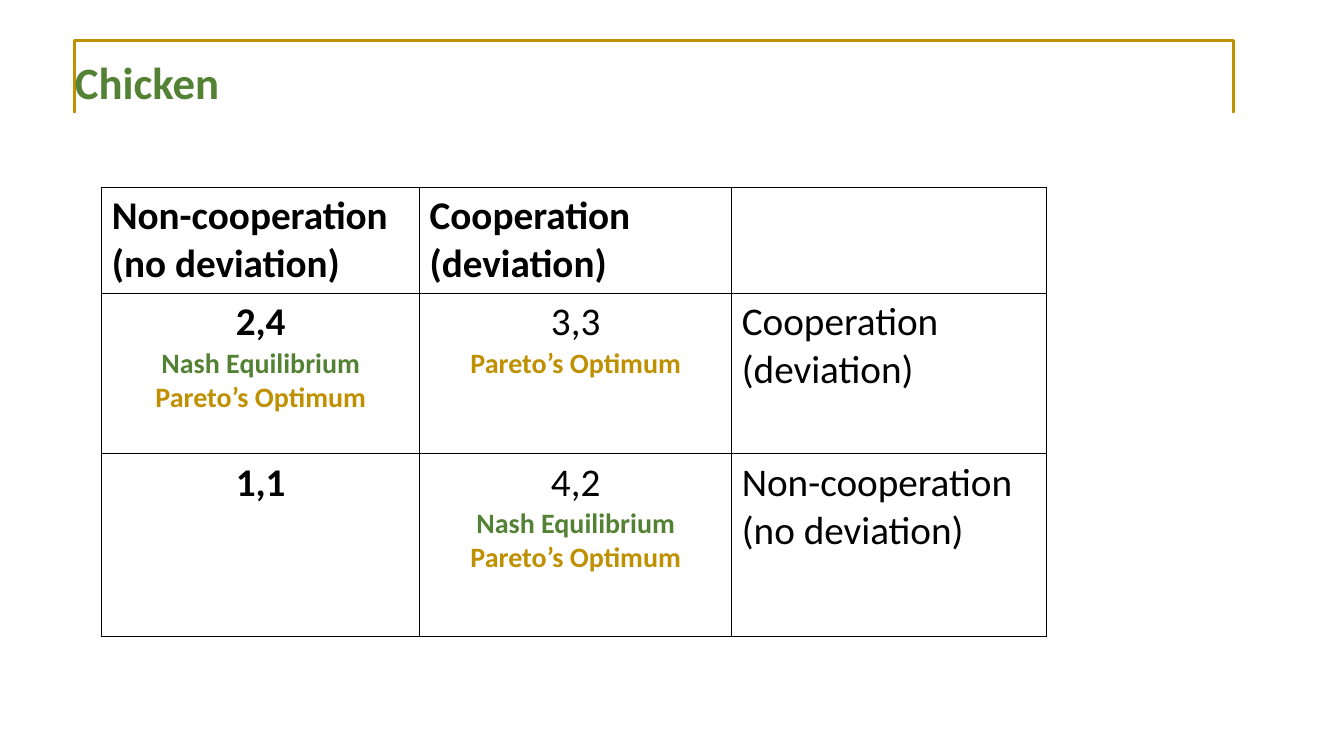
"""Build a slide with the payoff table of the game of Chicken."""
from dataclasses import dataclass

from lxml.etree import SubElement
from pptx import Presentation
from pptx.dml.color import RGBColor
from pptx.enum.shapes import MSO_SHAPE
from pptx.enum.text import MSO_ANCHOR, MSO_AUTO_SIZE, PP_ALIGN
from pptx.oxml.ns import qn
from pptx.util import Pt


@dataclass(frozen=True)
class Theme:
    font: str = "Calibri"
    green: str = "548235"
    gold: str = "BF9000"
    black: str = "000000"
    white: str = "FFFFFF"
    title_size: int = 32
    cell_size: int = 28
    note_size: int = 20
    border: int = 1
    frame: float = 2.25


THEME = Theme()
TITLE = "Chicken"
NASH = "Nash Equilibrium"
PARETO = "Pareto’s Optimum"
NOTE_COLORS = {NASH: THEME.green, PARETO: THEME.gold}
ROWS = [
    [["Non-cooperation", "(no deviation)"], ["Cooperation", "(deviation)"], []],
    [["2,4", NASH, PARETO], ["3,3", PARETO], ["Cooperation", "(deviation)"]],
    [["1,1"], ["4,2", NASH, PARETO], ["Non-cooperation", "(no deviation)"]],
]
COLUMN_WIDTHS = [227, 223, 225]
ROW_HEIGHTS = [75, 114.6, 130.3]
TABLE_LEFT, TABLE_TOP = 72.75, 133.9
TITLE_BOX = (46.25, 23.75, 828, 74)
FRAME_BOX = (53.4, 28.9, 828, 90.7)
BASE_BOX = (46, 80.7, 847.5, 44)


def add_span(para, text, size, color, bold):
    """Add one formatted run to a paragraph."""
    span = para.add_run()
    span.text = text
    span.font.name = THEME.font
    span.font.size = Pt(size)
    span.font.bold = bold
    span.font.color.rgb = RGBColor.from_string(color)


def add_title(page):
    """Place the title in its placeholder."""
    box = page.shapes.title
    box.left, box.top, box.width, box.height = map(Pt, TITLE_BOX)
    frame = box.text_frame
    frame.auto_size = MSO_AUTO_SIZE.NONE
    frame.vertical_anchor = MSO_ANCHOR.MIDDLE
    para = frame.paragraphs[0]
    para.alignment = PP_ALIGN.LEFT
    para.line_spacing = 0.9
    add_span(para, TITLE, THEME.title_size, THEME.green, True)


def add_rectangle(page, bounds):
    """Add a plain rectangle without fill or line."""
    box = page.shapes.add_shape(MSO_SHAPE.RECTANGLE, *map(Pt, bounds))
    box.shadow.inherit = False
    box.fill.background()
    box.line.fill.background()
    return box


def add_title_frame(page):
    """Frame the title in gold, behind its text, with a white open base."""
    outline = add_rectangle(page, FRAME_BOX)
    outline.line.color.rgb = RGBColor.from_string(THEME.gold)
    outline.line.width = Pt(THEME.frame)
    page.shapes.title.element.addprevious(outline.element)
    base = add_rectangle(page, BASE_BOX)
    base.fill.solid()
    base.fill.fore_color.rgb = RGBColor.from_string(THEME.white)


def add_borders(cell):
    """Give a cell a thin line on all four sides, ahead of its fill."""
    properties = cell.fill._xPr
    for position, side in enumerate(("lnL", "lnR", "lnT", "lnB")):
        line = SubElement(properties, qn(f"a:{side}"), w=str(Pt(THEME.border)))
        fill = SubElement(line, qn("a:solidFill"))
        SubElement(fill, qn("a:srgbClr"), val=THEME.black)
        properties.insert(position, line)


def fill_cell(cell, lines, row, column):
    """Write a cell: headings on the left, payoffs centred."""
    is_payoff = row > 0 and column < 2
    frame = cell.text_frame
    for index, text in enumerate(lines):
        para = frame.add_paragraph() if index else frame.paragraphs[0]
        para.alignment = PP_ALIGN.CENTER if is_payoff else PP_ALIGN.LEFT
        is_note = text in NOTE_COLORS
        size = THEME.note_size if is_note else THEME.cell_size
        bold = is_note or row == 0 or column == 0
        add_span(para, text, size, NOTE_COLORS.get(text, THEME.black), bold)


def add_payoffs(page):
    """Add the payoff table."""
    table = page.shapes.add_table(
        len(ROWS), len(COLUMN_WIDTHS), Pt(TABLE_LEFT), Pt(TABLE_TOP),
        Pt(sum(COLUMN_WIDTHS)), Pt(sum(ROW_HEIGHTS)),
    ).table
    table.first_row = table.horz_banding = False
    for column, width in enumerate(COLUMN_WIDTHS):
        table.columns[column].width = Pt(width)
    for row, height in enumerate(ROW_HEIGHTS):
        table.rows[row].height = Pt(height)
        for column, lines in enumerate(ROWS[row]):
            cell = table.cell(row, column)
            cell.fill.background()
            add_borders(cell)
            fill_cell(cell, lines, row, column)


def main():
    """Build and save the deck."""
    deck = Presentation()
    deck.slide_width, deck.slide_height = Pt(960), Pt(540)
    page = deck.slides.add_slide(deck.slide_layouts[5])
    add_title(page)
    add_title_frame(page)
    add_payoffs(page)
    deck.save("out.pptx")


if __name__ == "__main__":
    main()
